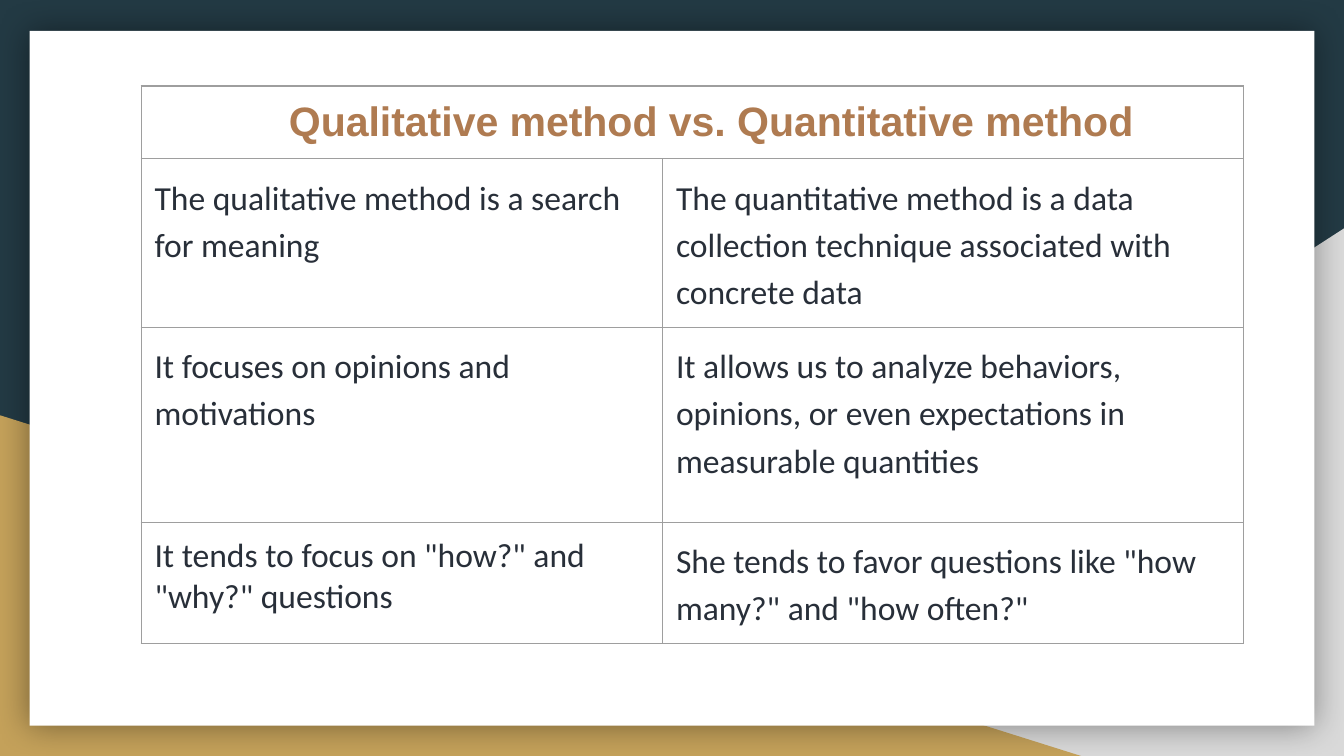
from lxml import etree
from pptx import Presentation
from pptx.dml.color import RGBColor
from pptx.enum.shapes import MSO_SHAPE
from pptx.oxml.ns import qn
from pptx.util import Inches, Pt

RECT = MSO_SHAPE.RECTANGLE
WEDGE = MSO_SHAPE.RIGHT_TRIANGLE
COLORS = {
    "navy": "233A44",
    "gray": "D9D9D9",
    "gold": "C4A15A",
    "white": "FFFFFF",
    "black": "000000",
    "brown": "AF7B51",
    "ink": "282F39",
    "line": "9E9E9E",
}
TITLE = "Qualitative method vs. Quantitative method"
PAIRS = [
    ("The qualitative method is a search for meaning",
     "The quantitative method is a data collection technique associated with concrete data"),
    ("It focuses on opinions and motivations",
     "It allows us to analyze behaviors, opinions, or even expectations in measurable quantities"),
    ("It tends to focus on \"how?\" and \"why?\" questions",
     "She tends to favor questions like \"how many?\" and \"how often?\""),
]
COLS = [3.88, 4.32]
ROWS = [0.54, 1.25, 1.45, 0.9]


def color(name):
    return RGBColor.from_string(COLORS[name])


def add_node(parent, tag, **attrs):
    return etree.SubElement(parent, qn(tag), **attrs)


def add_panel(slide, kind, box, fill, flip=False):
    shape = slide.shapes.add_shape(kind, *map(Inches, box))
    shape.shadow.inherit = False
    shape.fill.solid()
    shape.fill.fore_color.rgb = color(fill)
    shape.line.fill.background()
    if flip:
        shape.element.spPr.find(qn("a:xfrm")).set("flipH", "1")
    return shape


def add_glow(shape):
    effects = shape.element.spPr.find(qn("a:effectLst"))
    shadow = add_node(effects, "a:outerShdw", blurRad=str(Pt(18)), dist="0",
                      algn="ctr", rotWithShape="0")
    tint = add_node(shadow, "a:srgbClr", val=COLORS["black"])
    add_node(tint, "a:alpha", val="40000")


def add_edges(cell):
    props = cell._tc.get_or_add_tcPr()
    for side in ("L", "R", "T", "B"):
        edge = add_node(props, f"a:ln{side}", w=str(Pt(0.75)))
        fill = add_node(edge, "a:solidFill")
        add_node(fill, "a:srgbClr", val=COLORS["line"])


def put_text(cell, text, size=18, font="Calibri", ink="ink", bold=False,
             space=1.15, indent=0):
    para = cell.text_frame.paragraphs[0]
    para.line_spacing = space
    props = para._p.get_or_add_pPr()
    props.set("marL", str(Inches(indent)))
    props.set("indent", "0")
    run = para.add_run()
    run.text = text
    run.font.size = Pt(size)
    run.font.name = font
    run.font.bold = bold
    run.font.color.rgb = color(ink)


def style_cell(cell):
    inset = Inches(0.1)
    cell.margin_left = cell.margin_right = inset
    cell.margin_top = cell.margin_bottom = inset
    add_edges(cell)
    cell.fill.background()


def add_grid(slide):
    frame = slide.shapes.add_table(
        len(ROWS), len(COLS), Inches(1.05), Inches(0.64),
        Inches(sum(COLS)), Inches(sum(ROWS)))
    table = frame.table
    table.first_row = table.horz_banding = False
    for col, width in zip(table.columns, COLS):
        col.width = Inches(width)
    for row, height in zip(table.rows, ROWS):
        row.height = Inches(height)
    for cell in table.iter_cells():
        style_cell(cell)
    head = table.cell(0, 0)
    head.merge(table.cell(0, 1))
    put_text(head, TITLE, size=22, font="Arial", ink="brown", bold=True,
             space=1.0, indent=1)
    for r, pair in enumerate(PAIRS, 1):
        for c, text in enumerate(pair):
            tight = (r, c) == (3, 0)
            put_text(table.cell(r, c), text, space=1.0 if tight else 1.15)


def main():
    deck = Presentation()
    deck.slide_width = Inches(10)
    deck.slide_height = deck.slide_width * 9 // 16
    slide = deck.slides.add_slide(deck.slide_layouts[6])
    back = slide.background.fill
    back.solid()
    back.fore_color.rgb = color("navy")
    add_panel(slide, WEDGE, (3.92, 1.7, 6.08, 3.93), "gray", flip=True)
    add_panel(slide, WEDGE, (0, 3.09, 8.06, 2.54), "gold")
    add_glow(add_panel(slide, RECT, (0.22, 0.23, 9.56, 5.17), "white"))
    add_grid(slide)
    deck.save("out.pptx")


if __name__ == "__main__":
    main()
